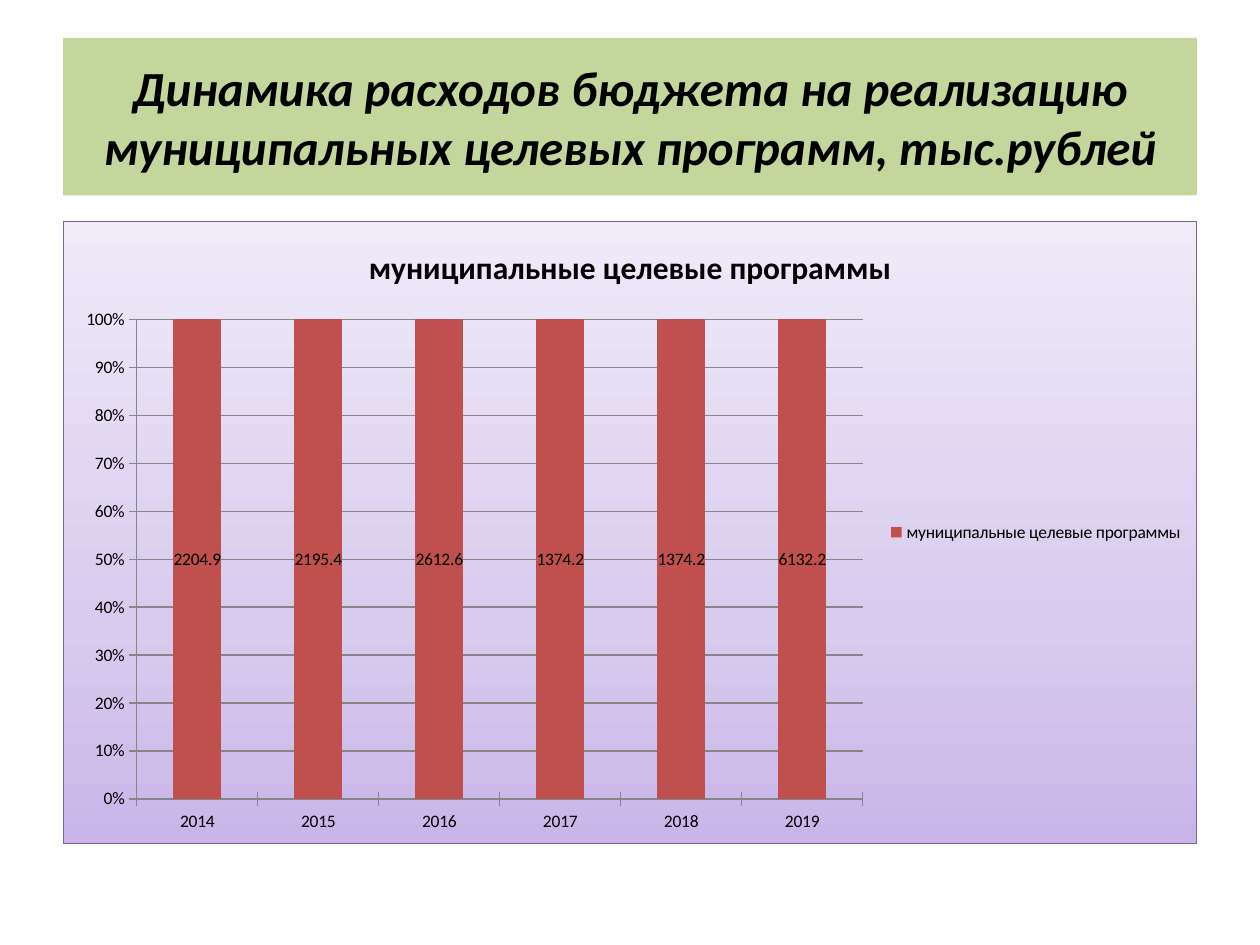
from lxml import etree
from pptx import Presentation
from pptx.chart.data import CategoryChartData
from pptx.dml.color import RGBColor
from pptx.enum.chart import XL_CHART_TYPE as CT, XL_LABEL_POSITION as LP
from pptx.enum.chart import XL_LEGEND_POSITION as LEG, XL_TICK_MARK as TICK
from pptx.enum.text import MSO_ANCHOR, PP_ALIGN
from pptx.oxml.ns import qn
from pptx.util import Inches, Pt

TITLE = "Динамика расходов бюджета на реализацию муниципальных целевых программ, тыс.рублей"
SERIES = "муниципальные целевые программы"
SPENDING = {"2014": 2204.9, "2015": 2195.4, "2016": 2612.6,
            "2017": 1374.2, "2018": 1374.2, "2019": 6132.2}
GRADIENT = [(0, "C9B5E8"), (35, "D8CBEE"), (100, "F0EAF9")]
BORDER = "7D60A0"
FONT = "Calibri"
BLACK = RGBColor(0, 0, 0)
GREEN = RGBColor(0xC3, 0xD6, 0x9B)
RED = RGBColor(0xC0, 0x50, 0x4D)
GRAY = RGBColor(0x86, 0x86, 0x86)
LEFT, WIDTH = Inches(0.5), Inches(9)


def style(font, size, bold=False, italic=False):
    font.name, font.size = FONT, Pt(size)
    font.bold, font.italic = bold, italic
    font.color.rgb = BLACK


def add_color(parent, value):
    etree.SubElement(parent, qn("a:srgbClr"), val=value)


def paint_chart_area(chart):
    area = etree.Element(qn("c:spPr"))
    grad = etree.SubElement(area, qn("a:gradFill"))
    stops = etree.SubElement(grad, qn("a:gsLst"))
    for pos, value in GRADIENT:
        add_color(etree.SubElement(stops, qn("a:gs"), pos=str(pos * 1000)), value)
    etree.SubElement(grad, qn("a:lin"), ang=str(270 * 60000), scaled="1")
    line = etree.SubElement(area, qn("a:ln"), w=str(Pt(0.75)))
    add_color(etree.SubElement(line, qn("a:solidFill")), BORDER)
    chart.element.find(qn("c:chart")).addnext(area)


def add_title(s):
    sp = s.shapes.title
    sp.left, sp.top, sp.width, sp.height = LEFT, Inches(0.3), WIDTH, Inches(1.25)
    sp.fill.solid()
    sp.fill.fore_color.rgb = GREEN
    tf = sp.text_frame
    tf.word_wrap = True
    tf.vertical_anchor = MSO_ANCHOR.MIDDLE
    p = tf.paragraphs[0]
    p.alignment = PP_ALIGN.CENTER
    r = p.add_run()
    r.text = TITLE
    style(r.font, 28, bold=True, italic=True)


def add_spending_chart(s):
    data = CategoryChartData()
    data.categories = list(SPENDING)
    data.add_series(SERIES, list(SPENDING.values()))
    chart = s.shapes.add_chart(CT.COLUMN_STACKED_100, LEFT, Inches(1.75),
                               WIDTH, Inches(4.95), data).chart
    style(chart.font, 10)
    chart.has_title = True
    r = chart.chart_title.text_frame.paragraphs[0].add_run()
    r.text = SERIES
    style(r.font, 18, bold=True)
    chart.chart_title.include_in_layout = False
    chart.has_legend = True
    chart.legend.position = LEG.RIGHT
    chart.legend.include_in_layout = False

    for axis in (chart.category_axis, chart.value_axis):
        axis.major_tick_mark = TICK.CROSS
        axis.format.line.color.rgb = GRAY
    axis = chart.value_axis
    axis.has_major_gridlines = True
    axis.major_gridlines.format.line.color.rgb = GRAY
    axis.tick_labels.number_format = "0%"
    axis.tick_labels.number_format_is_linked = False

    plot = chart.plots[0]
    plot.vary_by_categories = False
    plot.gap_width, plot.overlap = 150, 100
    series = plot.series[0]
    series.format.fill.solid()
    series.format.fill.fore_color.rgb = RED
    labels = series.data_labels
    labels.show_value = True
    labels.position = LP.CENTER
    style(labels.font, 10)
    paint_chart_area(chart)


prs = Presentation()
prs.slide_width, prs.slide_height = Inches(10), Inches(7.5)
s = prs.slides.add_slide(prs.slide_layouts[5])
add_title(s)
add_spending_chart(s)
prs.save("out.pptx")
